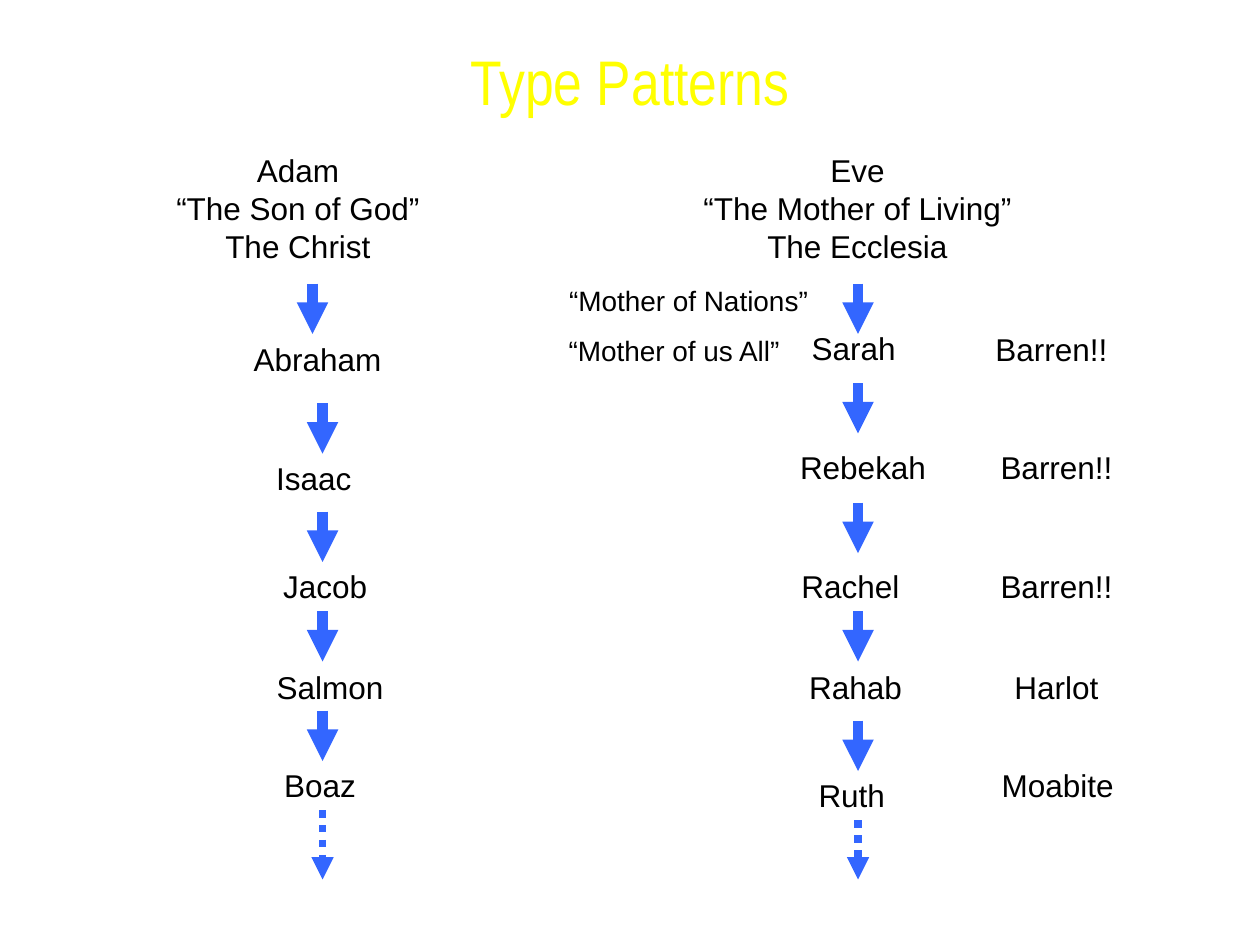
from lxml import etree
from pptx import Presentation
from pptx import util as u
from pptx.dml.color import RGBColor
from pptx.enum import dml, shapes, text
from pptx.oxml.ns import qn

# Content: (lines, left, top, width) in inches
HEADS = [
    (["Adam", "“The Son of God”", "The Christ"], 1.3, 1.15, 2.13),
    (["Eve", "“The Mother of Living”", "The Ecclesia"], 5.31, 1.15, 2.99),
]
MEN = [
    (["Abraham"], 1.91, 2.65, 1.22),
    (["Isaac"], 2.09, 3.59, 0.8),
    (["Jacob"], 1.97, 4.45, 1.22),
    (["Salmon"], 2.01, 5.25, 1.22),
    (["Boaz"], 1.93, 6.03, 1.22),
]
WOMEN = [
    (["Sarah"], 6.34, 2.56, 0.87),
    (["Rebekah"], 6.25, 3.51, 1.2),
    (["Rachel"], 6.26, 4.45, 0.98),
    (["Rahab"], 6.18, 5.25, 1.22),
    (["Ruth"], 6.15, 6.11, 1.22),
]
STATUS = [
    (["Barren!!"], 7.8, 2.57, 1.09),
    (["Barren!!"], 7.84, 3.51, 1.09),
    (["Barren!!"], 7.84, 4.45, 1.09),
    (["Harlot"], 7.95, 5.25, 0.87),
    (["Moabite"], 7.85, 6.03, 1.09),
]
TITLES_OF_SARAH = [
    (["“Mother of Nations”"], 4.41, 2.2, 2.11),
    (["“Mother of us All”"], 4.4, 2.6, 1.9),
]
# Arrows: (x, top) of each descent step, and of the dotted line onward
STEP = 0.4
DESCENT = ([(2.48, 2.25)] + [(2.56, y) for y in (3.2, 4.06, 4.85, 5.64)]
           + [(6.81, y) for y in (2.25, 3.04, 3.99, 4.85, 5.72)])
ONWARD = [(2.56, 6.43), (6.81, 6.51)]
ONWARD_END = 6.98


def colour(value):
    return RGBColor.from_string(value)


def style(paragraph, font, size, value):
    paragraph.alignment = text.PP_ALIGN.CENTER
    paragraph.font.name = font
    paragraph.font.size = u.Pt(size)
    paragraph.font.color.rgb = colour(value)


def add_label(lines, left, top, width, size=18):
    height = 0.1 + len(lines) * size / 60
    label = slide.shapes.add_textbox(*map(u.Inches, (left, top, width, height)))
    frame = label.text_frame
    frame.word_wrap = False
    frame.text = "\n".join(lines)
    for paragraph in frame.paragraphs:
        style(paragraph, "Arial", size, "000000")


def add_arrow(x, top, bottom, width, dash=None):
    arrow = slide.shapes.add_connector(
        shapes.MSO_CONNECTOR.STRAIGHT, *map(u.Inches, (x, top, x, bottom)))
    arrow.line.color.rgb = colour("3366FF")
    arrow.line.width = u.Pt(width)
    if dash:
        arrow.line.dash_style = dash
    properties = arrow.element.spPr
    etree.SubElement(properties.find(qn("a:ln")), qn("a:tailEnd"), type="triangle")
    etree.SubElement(properties, qn("a:effectLst"))


deck = Presentation()
deck.slide_width, deck.slide_height = u.Inches(10), u.Inches(7.5)
slide = deck.slides.add_slide(deck.slide_layouts[5])

# Title
title = slide.shapes.title
title.left, title.top, title.width, title.height = map(u.Inches, (3.03, 0.28, 3.94, 0.71))
title.text_frame.text = "Type Patterns"
style(title.text_frame.paragraphs[0], "Arial Narrow", 36, "FFFF00")

# Names and notes
for entry in HEADS + MEN + WOMEN + STATUS:
    add_label(*entry)
for entry in TITLES_OF_SARAH:
    add_label(*entry, size=16)

# Lines of descent
for x, top in DESCENT:
    add_arrow(x, top, top + STEP, 6)
for x, top in ONWARD:
    add_arrow(x, top, ONWARD_END, 4.25, dml.MSO_LINE.ROUND_DOT)

deck.save("out.pptx")
